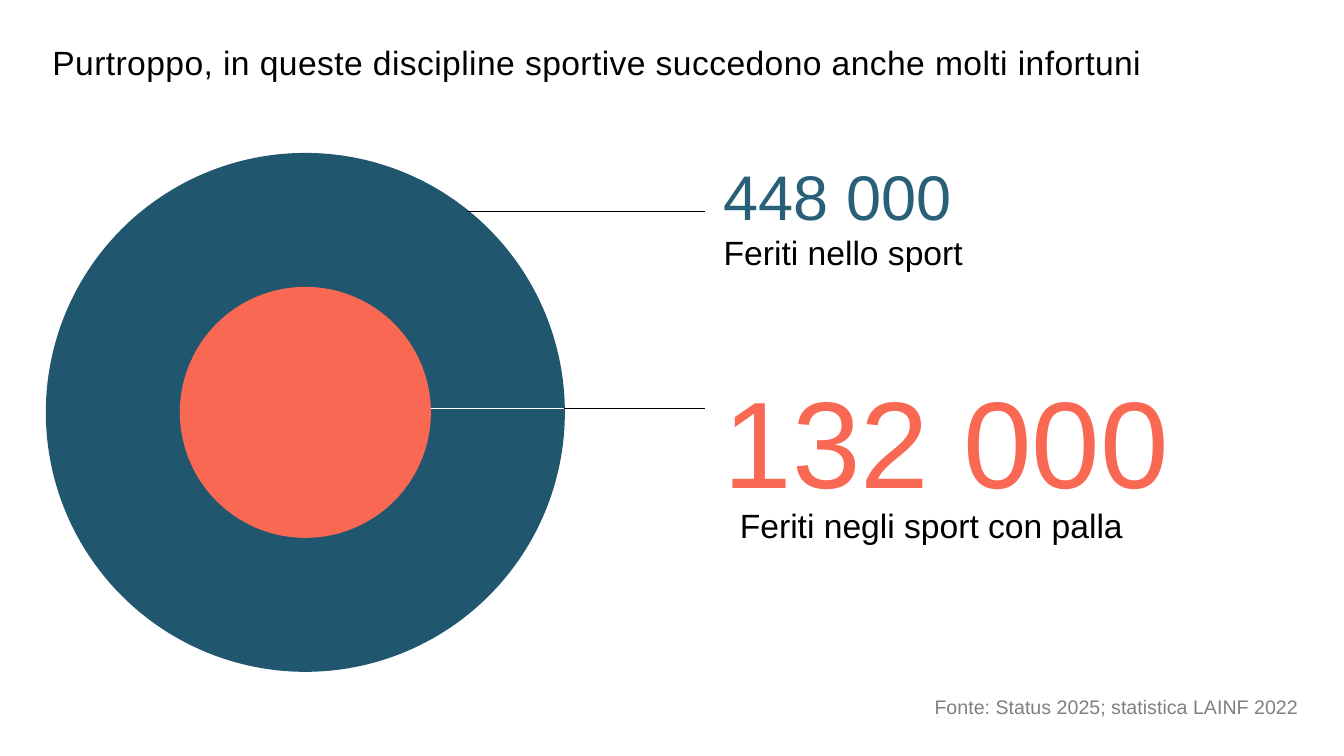
from pptx import Presentation
from pptx.dml.color import RGBColor as Color
from pptx.enum.shapes import MSO_CONNECTOR as Connector, MSO_SHAPE as Shape
from pptx.enum.text import MSO_ANCHOR as Anchor, MSO_AUTO_SIZE as AutoSize, PP_ALIGN as Align
from pptx.oxml.ns import qn
from pptx.util import Inches, Pt

COLORS = {
    "black": "000000", "white": "FFFFFF", "gray": "808080",
    "petrol": "20566E", "blue": "286078", "coral": "F86852",
}

presentation = Presentation()
presentation.slide_width = Inches(13.33)
presentation.slide_height = Inches(7.5)
slide = presentation.slides.add_slide(presentation.slide_layouts[5])

# Grid of 100 columns by 100 rows
column = presentation.slide_width / 100
row = presentation.slide_height / 100


def write(shape, text, size, color="black", spacing=0, after=0, fit=AutoSize.NONE):
    frame = shape.text_frame
    frame.margin_left = frame.margin_right = frame.margin_top = frame.margin_bottom = 0
    frame.word_wrap = True
    frame.auto_size = fit
    frame.vertical_anchor = Anchor.TOP
    paragraph = frame.paragraphs[0]
    paragraph.alignment = Align.LEFT
    paragraph.line_spacing = 1.05
    paragraph.space_before = Pt(0)
    paragraph.space_after = Pt(after)
    run = paragraph.add_run()
    run.text = text
    run.font.name = "Arial"
    run.font.size = Pt(size)
    run.font.color.rgb = Color.from_string(COLORS[color])
    if spacing:
        run._r.get_or_add_rPr().set("spc", str(int(spacing * 100)))


def add_circle(diameter, color):
    # Both circles share one centre
    side = diameter * column
    left, top = 22.72 * column - side / 2, 54.55 * row - side / 2
    circle = slide.shapes.add_shape(Shape.OVAL, int(left), int(top), int(side), int(side))
    circle.shadow.inherit = False
    circle.fill.solid()
    circle.fill.fore_color.rgb = Color.from_string(COLORS[color])
    circle.line.fill.background()


# Title
title = slide.shapes.title
title.left, title.top = int(3.9 * column), int(5.33 * row)
title.width, title.height = int(92.1 * column), int(4.67 * row)
write(title, "Purtroppo, in queste discipline sportive succedono anche molti infortuni",
      24, spacing=0.3)

# All sports injuries
add_circle(38.62, "petrol")

# Leader lines: start column, end column, row, colour
for start, end, level, color in [
    (34.73, 52.43, 28, "black"),
    (42, 52.43, 54, "black"),
    (23.03, 42, 54, "white"),
]:
    leader = slide.shapes.add_connector(
        Connector.STRAIGHT, int(start * column), int(level * row),
        int(end * column), int(level * row))
    leader.line.color.rgb = Color.from_string(COLORS[color])
    leader.line.width = Pt(1)
    leader._element.spPr.append(leader._element.makeelement(qn("a:effectLst"), {}))

# Figures, captions and source: left, top, width, height in grid units
for left, top, width, height, text, size, color in [
    (55.05, 66.53, 35.18, 5.47, "Feriti negli sport con palla", 24, "black"),
    (53.85, 47.33, 43.95, 20.27, "132 000", 88, "coral"),
    (53.85, 30.4, 23.7, 5.47, "Feriti nello sport", 24, "black"),
    (53.85, 20.27, 24.75, 10.4, "448 000", 45, "blue"),
    (69.53, 91.73, 29.1, 3.2, "Fonte: Status 2025; statistica LAINF 2022", 14, "gray"),
]:
    box = slide.shapes.add_textbox(
        int(left * column), int(top * row), int(width * column), int(height * row))
    write(box, text, size, color, after=12, fit=AutoSize.SHAPE_TO_FIT_TEXT)

# Ball sports injuries
add_circle(18.68, "coral")

presentation.save("out.pptx")
